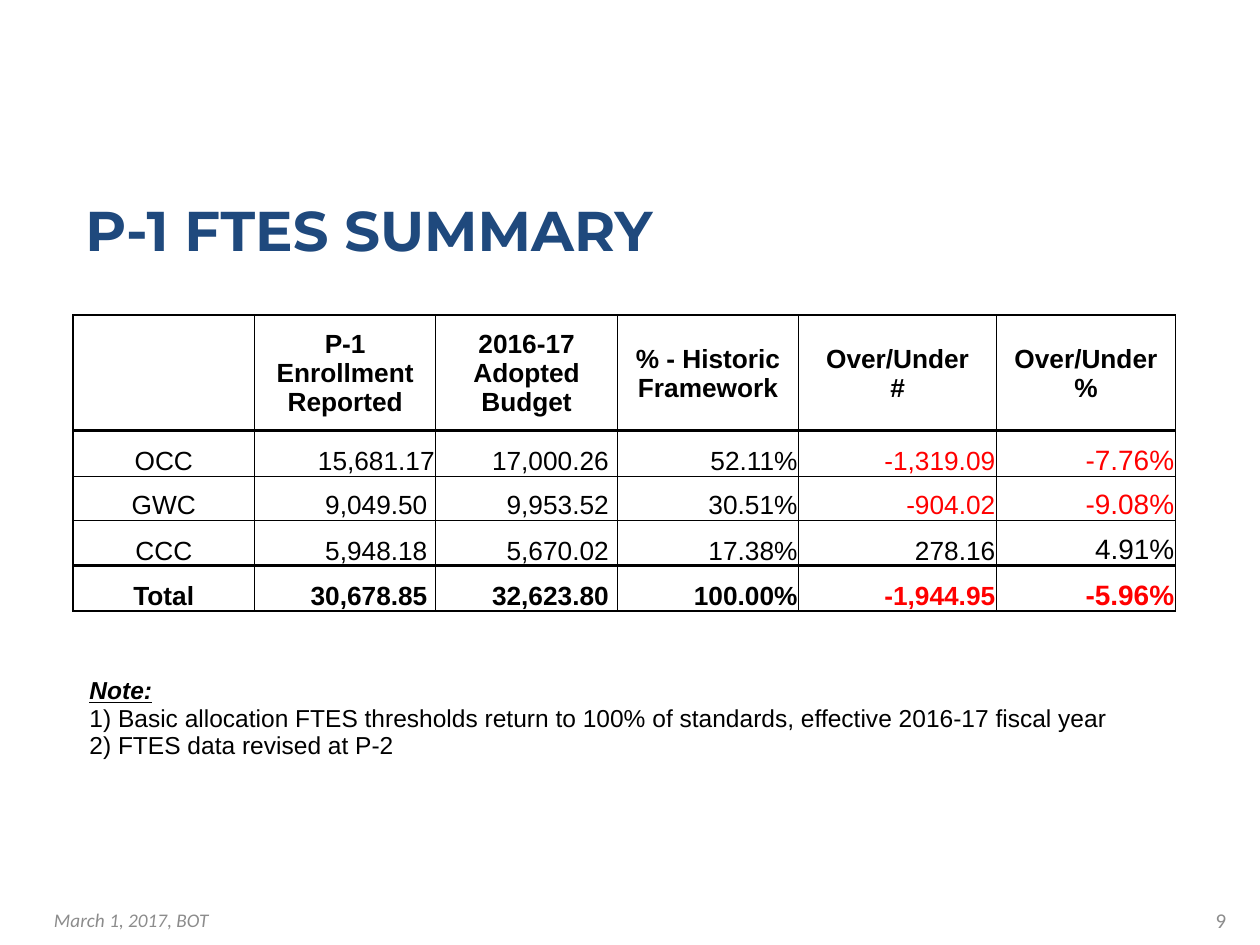
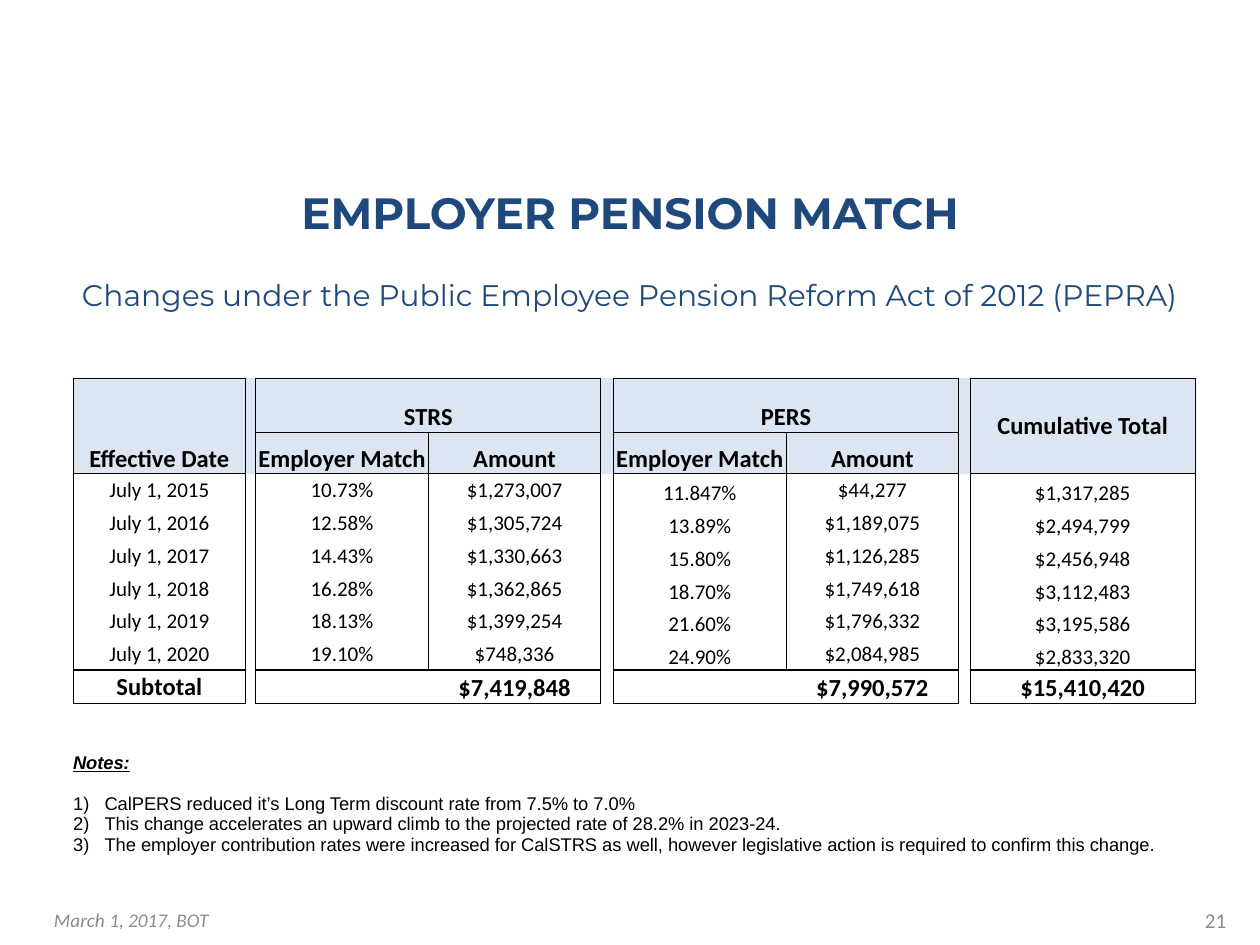
from lxml import etree
from pptx import Presentation
from pptx.dml.color import RGBColor
from pptx.enum.text import MSO_ANCHOR, PP_ALIGN
from pptx.oxml.ns import qn
from pptx.util import Inches, Pt

LEFT, CENTER, RIGHT = PP_ALIGN.LEFT, PP_ALIGN.CENTER, PP_ALIGN.RIGHT
TOP, MIDDLE, BOTTOM = MSO_ANCHOR.TOP, MSO_ANCHOR.MIDDLE, MSO_ANCHOR.BOTTOM

NAVY = RGBColor(0x1F, 0x49, 0x7D)
GRAY = RGBColor(0x8C, 0x8C, 0x8C)
BLACK = RGBColor(0, 0, 0)
RED = RGBColor(0xFF, 0, 0)
WHITE = RGBColor(0xFF, 0xFF, 0xFF)
PALE_BLUE = RGBColor(0xDC, 0xE6, 0xF2)

NO_STYLE = "{2D5ABB26-0587-4C30-8999-92F81FD0307C}"
SNUG = (0.01, 0.01, 0.01, 0)
FLUSH = (0, 0, 0, 0)

TITLE = dict(name="Montserrat", size=Pt(32), color=NAVY, bold=True)
FOOTER = dict(name="Calibri", size=Pt(11), color=GRAY, italic=True)
PAGE_NUMBER = dict(name="Calibri", size=Pt(12), color=GRAY)
FTES = dict(name="Arial", size=Pt(15), color=BLACK)
PENSION = dict(name="Calibri", size=Pt(12), color=BLACK)
NOTE = dict(name="Arial", size=Pt(14), color=BLACK)
HEADING = dict(bold=True, italic=True, underline=True)

MEETING = "March 1, 2017, BOT"

FTES_ROWS = [
    ["", "P-1 Enrollment Reported", "2016-17 Adopted Budget",
     "% - Historic Framework", "Over/Under #", "Over/Under %"],
    ["OCC", "15,681.17", "17,000.26 ", "52.11%", "-1,319.09", "-7.76%"],
    ["GWC", "9,049.50 ", "9,953.52 ", "30.51%", "-904.02", "-9.08%"],
    ["CCC", "5,948.18 ", "5,670.02 ", "17.38%", "278.16", "4.91%"],
    ["Total", "30,678.85 ", "32,623.80 ", "100.00%", "-1,944.95", "-5.96%"],
]
FTES_COLS = [1.44] * 4 + [1.57, 1.42]
FTES_HEIGHTS = [0.92, 0.36, 0.35, 0.36, 0.36]
FTES_ROW_LINES = [1, 2, 0.5, 0.5, 2, 1]
FTES_COL_LINES = [1] + [0.5] * 5 + [1]
OVER_UNDER_WIDTH = 1.2  # keeps the unit sign on a line of its own
FTES_NOTES = [
    "1) Basic allocation FTES thresholds return to 100% of standards, effective 2016-17 fiscal year",
    "2) FTES data revised at P-2",
]

PENSION_TITLES = [
    ("EMPLOYER PENSION MATCH", dict(size=Pt(25))),
    ("Changes under the Public Employee Pension Reform Act of 2012 (PEPRA)",
     dict(size=Pt(17), bold=False)),
]
# Date, STRS match and amount, PERS match and amount, cumulative total
PENSION_ROWS = [
    ["", "STRS", "", "PERS", "", "Cumulative Total"],
    ["Effective Date", "Employer Match", "Amount", "Employer Match", "Amount", ""],
    ["July 1, 2015", "10.73%", "$1,273,007", "11.847%", "$44,277", "$1,317,285"],
    ["July 1, 2016", "12.58%", "$1,305,724", "13.89%", "$1,189,075", "$2,494,799"],
    ["July 1, 2017", "14.43%", "$1,330,663", "15.80%", "$1,126,285", "$2,456,948"],
    ["July 1, 2018", "16.28%", "$1,362,865", "18.70%", "$1,749,618", "$3,112,483"],
    ["July 1, 2019", "18.13%", "$1,399,254", "21.60%", "$1,796,332", "$3,195,586"],
    ["July 1, 2020", "19.10%", "$748,336", "24.90%", "$2,084,985", "$2,833,320"],
    ["Subtotal", "", "$7,419,848", "", "$7,990,572", "$15,410,420"],
]
PENSION_COLS = [1.37, 0.08, 1.37, 1.37, 0.1, 1.37, 1.37, 0.09, 1.79]
PENSION_HEIGHTS = [0.43, 0.33] + [0.26] * 7
PENSION_ROW_LINES = [0.5, 0.5, 0.5, 0, 0, 0, 0, 0, 1, 0.5]
DATE, STRS, PERS, CUMULATIVE = 0, 2, 5, 8
GAPS = (1, 4, 7)
HEADER_ROWS = 2
PENSION_NOTES = [
    "CalPERS reduced it’s Long Term discount rate from 7.5% to 7.0%",
    "This change accelerates an upward climb to the projected rate of 28.2% in 2023-24.",
    "The employer contribution rates were increased for CalSTRS as well, however "
    "legislative action is required to confirm this change.",
]


def write(paragraph, text, style, align=LEFT):
    paragraph.alignment = align
    if not text:
        # An empty cell would otherwise stretch its row to the default size
        paragraph._p.get_or_add_endParaRPr().set("sz", str(int(style["size"].pt * 100)))
        return
    paragraph.text = text
    for run in paragraph.runs:
        for attribute, value in style.items():
            if attribute == "color":
                run.font.color.rgb = value
            else:
                setattr(run.font, attribute, value)


def add_text(slide, box, text, style, align=LEFT, anchor=MIDDLE):
    frame = slide.shapes.add_textbox(*map(Inches, box)).text_frame
    frame.word_wrap = True
    frame.vertical_anchor = anchor
    write(frame.paragraphs[0], text, style, align)


def add_footer(slide, number):
    add_text(slide, (0.33, 7.1, 3.75, 0.4), MEETING, FOOTER)
    add_text(slide, (7.5, 7.1, 2.33, 0.4), number, PAGE_NUMBER, RIGHT)


def add_grid(slide, left, top, cols, heights):
    """Add a table without style and return it."""
    table = slide.shapes.add_table(
        len(heights), len(cols), Inches(left), Inches(top),
        Inches(sum(cols)), Inches(sum(heights))).table
    table.first_row = table.horz_banding = False
    table._tbl.tblPr.find(qn("a:tableStyleId")).text = NO_STYLE
    for column, width in zip(table.columns, cols):
        column.width = Inches(width)
    for row, height in zip(table.rows, heights):
        row.height = Inches(height)
    return table


def format_cell(cell, anchor, margins=SNUG, fill=None, lines=()):
    """lines holds the left, right, top and bottom widths in points, 0 for none."""
    cell.vertical_anchor = anchor
    for side, margin in zip(("left", "right", "top", "bottom"), margins):
        setattr(cell, f"margin_{side}", Inches(margin))
    properties = cell._tc.get_or_add_tcPr()
    for tag, width in zip(("a:lnL", "a:lnR", "a:lnT", "a:lnB"), lines):
        line = etree.SubElement(properties, qn(tag), w=str(Pt(width)))
        if width:
            solid = etree.SubElement(line, qn("a:solidFill"))
            etree.SubElement(solid, qn("a:srgbClr"), val=str(BLACK))
        else:
            etree.SubElement(line, qn("a:noFill"))
    if fill is None:
        cell.fill.background()
    else:
        cell.fill.solid()
        cell.fill.fore_color.rgb = fill


def add_notes(slide, left, top, width, heights, heading, notes, style, numbered=False):
    """Add a table with the notes in its first row and a spare row below."""
    table = add_grid(slide, left, top, [width], heights)
    cell, spare = table.cell(0, 0), table.cell(1, 0)
    for part in (cell, spare):
        format_cell(part, BOTTOM, FLUSH)
    write(spare.text_frame.paragraphs[0], "", style)
    frame = cell.text_frame
    write(frame.paragraphs[0], heading, style | HEADING)
    for index, note in enumerate(notes):
        paragraph = frame.add_paragraph()
        if numbered:
            properties = paragraph._p.get_or_add_pPr()
            properties.set("marL", str(Inches(0.25)))
            properties.set("indent", str(-Inches(0.25)))
            etree.SubElement(properties, qn("a:buAutoNum"), type="arabicParenR")
            if index == 0:
                paragraph.space_before = Pt(12)
        write(paragraph, note, style)


def add_ftes_table(slide):
    table = add_grid(slide, 0.58, 2.5, FTES_COLS, FTES_HEIGHTS)
    last_row, last_col = len(FTES_ROWS) - 1, len(FTES_COLS) - 1
    for r, values in enumerate(FTES_ROWS):
        for c, value in enumerate(values):
            cell = table.cell(r, c)
            margins = SNUG
            if value.startswith("Over/Under"):
                side = (FTES_COLS[c] - OVER_UNDER_WIDTH) / 2
                margins = (side, side, *SNUG[2:])
            format_cell(cell, BOTTOM if r else MIDDLE, margins,
                        lines=FTES_COL_LINES[c:c + 2] + FTES_ROW_LINES[r:r + 2])
            style = FTES | dict(bold=r in (0, last_row),
                                color=RED if value.startswith("-") else BLACK)
            if r and c == last_col:
                style["size"] = Pt(16)
            write(cell.text_frame.paragraphs[0], value, style,
                  RIGHT if r and c else CENTER)


def pension_lines(r, c):
    """Frame each block of columns and leave the gaps between them open."""
    if c in GAPS:
        return ()
    subtotal = r == len(PENSION_ROWS) - 1
    left, right, top, bottom = 0.5, 0.5, *PENSION_ROW_LINES[r:r + 2]
    if subtotal and c in (STRS, PERS):
        right = 0
    if subtotal and c in (STRS + 1, PERS + 1):
        left = 0
    if c == DATE:
        top, bottom = 0 if r == 1 else top, 0 if r == 0 else bottom
    return left, right, top, bottom


def add_pension_table(slide):
    table = add_grid(slide, 0.58, 3, PENSION_COLS, PENSION_HEIGHTS)
    last_row = len(PENSION_ROWS) - 1
    for r, values in enumerate(PENSION_ROWS):
        header, remaining = r < HEADER_ROWS, iter(values)
        for c in range(len(PENSION_COLS)):
            cell = table.cell(r, c)
            if header:
                anchor = MIDDLE if c == CUMULATIVE else BOTTOM
            elif r == last_row:
                anchor = MIDDLE if c == DATE else BOTTOM
            else:
                anchor = BOTTOM if c in (PERS, CUMULATIVE) else MIDDLE
            format_cell(cell, anchor, fill=PALE_BLUE if header else WHITE,
                        lines=pension_lines(r, c))
            strong = header or r == last_row
            style = PENSION | (dict(size=Pt(14), bold=True) if strong else {})
            write(cell.text_frame.paragraphs[0],
                  "" if c in GAPS else next(remaining), style, CENTER)
    for fund in (STRS, PERS):
        table.cell(0, fund).merge(table.cell(0, fund + 1))
    table.cell(0, CUMULATIVE).merge(table.cell(1, CUMULATIVE))


def build_ftes_slide(slide):
    add_text(slide, (0.58, 1.5, 8.67, 0.67), "P-1 FTES SUMMARY", TITLE, anchor=TOP)
    add_ftes_table(slide)
    add_notes(slide, 0.71, 5.33, 8.42, (0.67, 0.55), "Note:", FTES_NOTES, NOTE)
    add_footer(slide, "9")


def build_pension_slide(slide):
    titles = add_grid(slide, 0.5, 1.33, [9], [0.58, 0.58])
    for row, (text, changes) in enumerate(PENSION_TITLES):
        cell = titles.cell(row, 0)
        format_cell(cell, BOTTOM)
        write(cell.text_frame.paragraphs[0], text, TITLE | changes, CENTER)
    add_pension_table(slide)
    add_notes(slide, 0.58, 5.92, 9.12, (0.82, 0.27), "Notes:", PENSION_NOTES,
              NOTE | dict(size=Pt(10.5)), numbered=True)
    add_footer(slide, "21")


def main():
    deck = Presentation()
    deck.slide_width, deck.slide_height = Inches(10), Inches(7.5)
    blank = deck.slide_layouts[6]
    for build in (build_ftes_slide, build_pension_slide):
        build(deck.slides.add_slide(blank))
    deck.save("out.pptx")


if __name__ == "__main__":
    main()
